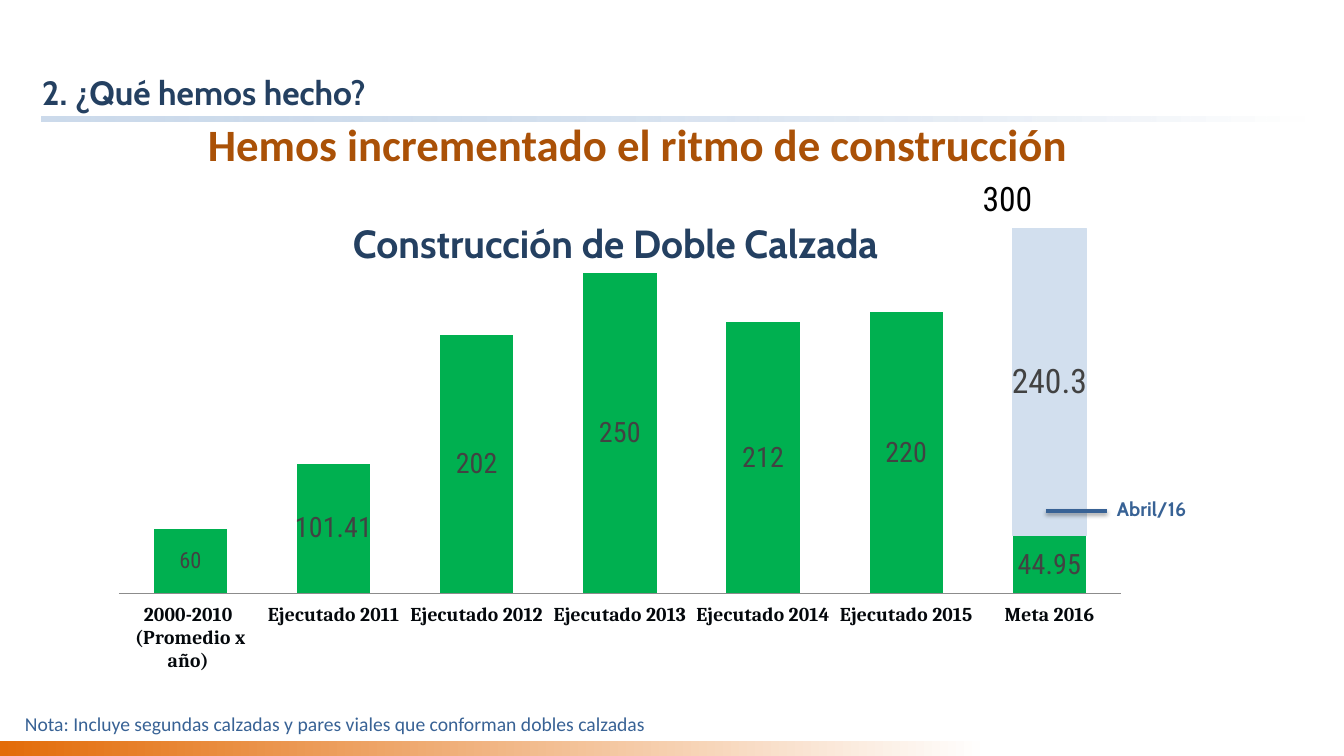
from dataclasses import dataclass

from lxml.etree import SubElement
from pptx import Presentation
from pptx.chart.data import CategoryChartData
from pptx.dml.color import RGBColor
from pptx.enum.chart import XL_CHART_TYPE, XL_LABEL_POSITION, XL_TICK_LABEL_POSITION, XL_TICK_MARK
from pptx.enum.shapes import MSO_CONNECTOR, MSO_SHAPE
from pptx.enum.text import MSO_ANCHOR, PP_ALIGN
from pptx.oxml import parse_xml
from pptx.oxml.ns import nsdecls, qn
from pptx.util import Emu, Pt

SLIDE_WIDTH, SLIDE_HEIGHT = 1344, 756


@dataclass(frozen=True)
class Theme:
    navy: str = "244061"
    blue: str = "386295"
    rule: str = "9AB7D9"
    rust: str = "AA5107"
    orange: str = "E36C09"
    green: str = "00B050"
    pale: str = "D2DFEE"
    label: str = "424242"
    category: str = "04080C"
    axis: str = "8C8C8C"
    black: str = "000000"
    white: str = "FFFFFF"
    display: str = "Cabin"
    body: str = "Calibri"
    serif: str = "Cambria"
    figures: str = "Roboto Condensed"
    heading_size: int = 32
    subtitle_size: int = 28
    title_size: int = 24
    value_size: int = 20
    small_value_size: int = 16
    note_size: int = 14
    chart_size: int = 10


THEME = Theme()


def px(length):
    return Emu(round(length * 914400 / 100.8))


def rgb(color):
    return RGBColor.from_string(color)


def set_font(font, name, size, color, bold=False):
    font.name, font.size, font.bold = name, Pt(size), bold
    font.color.rgb = rgb(color)


def add_text(slide, box, text, *, font, size, color, bold=False,
             align=PP_ALIGN.LEFT, anchor=MSO_ANCHOR.TOP, inset=True):
    shape = slide.shapes.add_textbox(*map(px, box))
    frame = shape.text_frame
    frame.word_wrap = True
    frame.vertical_anchor = anchor
    if not inset:
        frame.margin_left = frame.margin_top = frame.margin_right = frame.margin_bottom = 0
    paragraph = frame.paragraphs[0]
    paragraph.alignment = align
    run = paragraph.add_run()
    run.text = text
    set_font(run.font, font, size, color, bold)
    return shape


def add_fading_band(slide, box, color, opacity=100):
    """Band that fades from its colour to white, left to right."""
    band = slide.shapes.add_shape(MSO_SHAPE.RECTANGLE, *map(px, box))
    band.shadow.inherit = False
    band.line.fill.background()
    band.fill.gradient()
    band.fill.gradient_angle = 0
    start, end = band.fill.gradient_stops
    start.position, end.position = 0, 1
    start.color.rgb, end.color.rgb = rgb(color), rgb(THEME.white)
    if opacity < 100:
        first_color = next(band.element.iter(qn("a:srgbClr")))
        SubElement(first_color, qn("a:alpha"), val=str(opacity * 1000))


def add_header(slide, box):
    left, top, width, height = box
    add_fading_band(slide, (left, top + height + 5, width, 5), THEME.rule, 50)
    add_text(slide, box, "2. ¿Qué hemos hecho?", font=THEME.display, size=THEME.title_size,
             color=THEME.navy, bold=True, anchor=MSO_ANCHOR.BOTTOM, inset=False)
    add_text(slide, (left + 156, top + height, 952, 65),
             "Hemos incrementado el ritmo de construcción", font=THEME.body,
             size=THEME.heading_size, color=THEME.rust, bold=True)


def add_footer(slide, box):
    left, top, width, height = box
    add_text(slide, (left + 15, top - 34, 676, 34),
             "Nota: Incluye segundas calzadas y pares viales que conforman dobles calzadas",
             font=THEME.body, size=THEME.note_size, color=THEME.blue)
    add_fading_band(slide, box, THEME.orange)


def fix_plot_area(chart, x, y, width, height):
    """Place the inner plot area, in fractions of the chart."""
    plot_area = next(chart.element.iter(qn("c:plotArea")))
    for old_layout in plot_area.findall(qn("c:layout")):
        plot_area.remove(old_layout)
    plot_area.insert(0, parse_xml(
        f'<c:layout {nsdecls("c")}><c:manualLayout><c:layoutTarget val="inner"/>'
        '<c:xMode val="edge"/><c:yMode val="edge"/>'
        f'<c:x val="{x}"/><c:y val="{y}"/><c:w val="{width}"/><c:h val="{height}"/>'
        '</c:manualLayout></c:layout>'))


def style_series(series, color, label_size):
    series.format.fill.solid()
    series.format.fill.fore_color.rgb = rgb(color)
    labels = series.data_labels
    labels.show_value = True
    labels.position = XL_LABEL_POSITION.CENTER
    set_font(labels.font, THEME.figures, label_size, THEME.label)


def add_construction_chart(slide, box):
    years = [f"Ejecutado {year}" for year in range(2011, 2016)]
    data = CategoryChartData()
    data.categories = ["2000-2010 \n(Promedio x año) ", *years, "Meta 2016"]
    data.add_series("Series 1", (50, 101.41, 202, 250, 212, 220, 44.95))
    data.add_series("Series 2", (None,) * 6 + (240.3,))
    chart = slide.shapes.add_chart(XL_CHART_TYPE.COLUMN_STACKED, *map(px, box), data).chart
    chart.has_legend = chart.has_title = False
    set_font(chart.font, THEME.body, THEME.chart_size, THEME.blue)
    fix_plot_area(chart, 0.02, 0.02, 0.96, 0.81)

    plot = chart.plots[0]
    plot.vary_by_categories = False
    plot.gap_width, plot.overlap = 95, 100
    executed, pending = plot.series
    style_series(executed, THEME.green, THEME.value_size)
    style_series(pending, THEME.pale, THEME.title_size)
    pending.format.line.color.rgb = rgb(THEME.pale)
    pending.format.line.width = Pt(0.75)

    average_label = executed.points[0].data_label
    run = average_label.text_frame.paragraphs[0].add_run()
    run.text = "60"
    set_font(run.font, THEME.figures, THEME.small_value_size, THEME.label)
    average_label.position = XL_LABEL_POSITION.CENTER

    values = chart.value_axis
    values.minimum_scale, values.maximum_scale = 0, 300
    values.has_major_gridlines = False
    values.visible = False
    categories = chart.category_axis
    categories.major_tick_mark = categories.minor_tick_mark = XL_TICK_MARK.NONE
    categories.tick_label_position = XL_TICK_LABEL_POSITION.LOW
    categories.format.line.color.rgb = rgb(THEME.axis)
    set_font(categories.tick_labels.font, THEME.serif, THEME.note_size, THEME.category, True)


def add_progress_marker(slide, box):
    """Line leading to the label of the month reached."""
    left, top, width, height = box
    label = add_text(slide, (left + 61, top, width - 61, height), "Abril/16",
                     font=THEME.display, size=THEME.note_size, color=THEME.blue, bold=True)
    middle = top + height // 2
    line = slide.shapes.add_connector(MSO_CONNECTOR.STRAIGHT, px(left), px(middle),
                                      px(left + 61), px(middle))
    line.end_connect(label, 1)
    line.line.color.rgb = rgb(THEME.blue)
    line.line.width = Pt(3)
    effects = SubElement(line.element.spPr, qn("a:effectLst"))
    shadow = SubElement(effects, qn("a:outerShdw"), blurRad=str(Pt(3.1)), dist=str(Pt(1.8)),
                        dir="5400000", rotWithShape="0")
    shadow_color = SubElement(shadow, qn("a:srgbClr"), val=THEME.black)
    SubElement(shadow_color, qn("a:alpha"), val="35000")


def add_construction_panel(slide, box):
    left, top, width, height = box
    add_text(slide, (left + 255, top - 17, 991, 83), "Construcción de Doble Calzada",
             font=THEME.display, size=THEME.subtitle_size, color=THEME.navy, bold=True,
             anchor=MSO_ANCHOR.BOTTOM, inset=False)
    add_construction_chart(slide, box)
    add_text(slide, (left + 857, top - 27, 105, 56), "300", font=THEME.figures,
             size=THEME.title_size, color=THEME.black, align=PP_ALIGN.CENTER)
    add_progress_marker(slide, (left + 948, top + 292, 189, 38))


def main():
    presentation = Presentation()
    presentation.slide_width, presentation.slide_height = px(SLIDE_WIDTH), px(SLIDE_HEIGHT)
    slide = presentation.slides.add_slide(presentation.slide_layouts[6])
    add_header(slide, (42, 29, 1263, 83))
    add_footer(slide, (0, 741, 988, 15))
    add_construction_panel(slide, (98, 200, 1044, 474))
    presentation.save("out.pptx")


if __name__ == "__main__":
    main()
